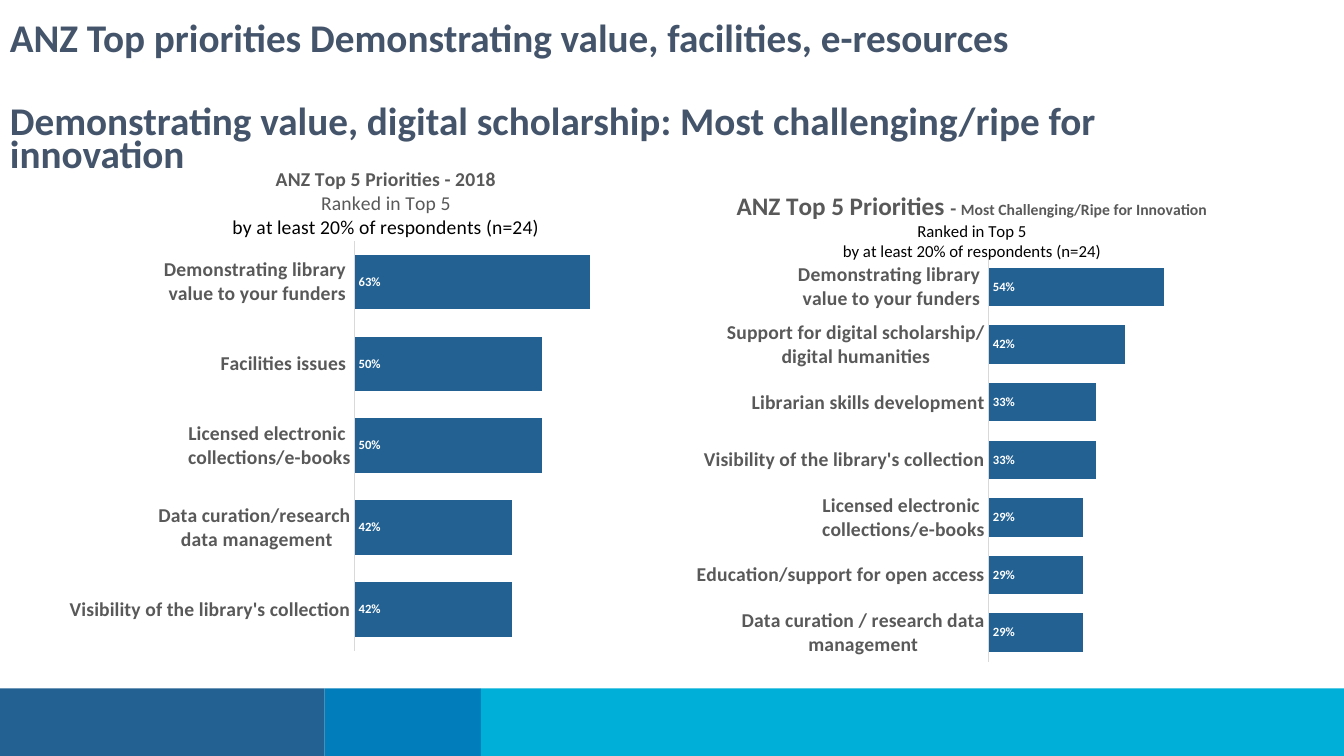
from itertools import accumulate
from typing import Any, NamedTuple

from pptx import Presentation
from pptx.chart.chart import Chart
from pptx.chart.data import CategoryChartData
from pptx.dml.color import RGBColor
from pptx.enum.chart import XL_CHART_TYPE as ChartType
from pptx.enum.chart import XL_LABEL_POSITION as LabelPosition
from pptx.enum.chart import XL_TICK_LABEL_POSITION as TickLabels
from pptx.enum.chart import XL_TICK_MARK as TickMark
from pptx.enum.shapes import MSO_SHAPE as ShapeType
from pptx.enum.text import PP_ALIGN as Align
from pptx.oxml import parse_xml
from pptx.oxml.ns import nsdecls
from pptx.slide import Slide
from pptx.util import Inches, Pt

NAVY, BLUE, CYAN = "236192", "007DBA", "00AFD7"
SLATE, GREY, LIGHT, BLACK, WHITE = "44546A", "595959", "D9D9D9", "000000", "FFFFFF"


class Run(NamedTuple):
    text: str
    size: float
    color: str = BLACK
    bold: bool = False


class PriorityChart(NamedTuple):
    box: tuple[float, float, float, float]
    title: list[list[Run]]
    title_at: tuple[float, float]
    plot: tuple[float, float, float, float]
    priorities: list[tuple[str, float]]  # from bottom to top


class Band(NamedTuple):
    width: float
    color: str


BANDS = [Band(3.22, NAVY), Band(1.55, BLUE), Band(8.56, CYAN)]

HEADLINES = [
    "ANZ Top priorities Demonstrating value, facilities, e-resources",
    "Demonstrating value, digital scholarship: Most challenging/ripe for innovation",
]

FUNDERS = "Demonstrating library \nvalue to your funders"
LICENSED = "Licensed electronic \ncollections/e-books"
VISIBILITY = "Visibility of the library's collection"
RESPONDENTS = "by at least 20% of respondents (n=24)"

CHARTS = [
    PriorityChart(
        box=(0.5, 1.61, 5.92, 5.21),
        title=[
            [Run("ANZ Top 5 Priorities - 2018", 14, GREY, True)],
            [Run("Ranked in Top 5", 14, GREY)],
            [Run(RESPONDENTS, 14)],
        ],
        title_at=(0.3, 0),
        plot=(0.51, 0.15, 0.47, 0.78),
        priorities=[
            (VISIBILITY, 0.42),
            ("Data curation/research\n data management", 0.42),
            (LICENSED, 0.5),
            ("Facilities issues ", 0.5),
            (FUNDERS, 0.63),
        ],
    ),
    PriorityChart(
        box=(6.41, 1.69, 6.18, 5.13),
        title=[
            [
                Run("ANZ Top 5 Priorities ", 18, GREY, True),
                Run("- ", 14, GREY, True),
                Run("Most Challenging/Ripe for Innovation", 11.2, GREY, True),
            ],
            [Run("Ranked in Top 5", 12)],
            [Run(RESPONDENTS, 12)],
        ],
        title_at=(0.14, 0.03),
        plot=(0.55, 0.17, 0.39, 0.78),
        priorities=[
            ("Data curation / research data management", 0.29),
            ("Education/support for open access", 0.29),
            (LICENSED, 0.29),
            (VISIBILITY, 0.33),
            ("Librarian skills development", 0.33),
            ("Support for digital scholarship/\ndigital humanities", 0.42),
            (FUNDERS, 0.54),
        ],
    ),
]


def rgb(color: str) -> RGBColor:
    return RGBColor.from_string(color)


def apply(target: Any, values: dict[str, Any]) -> None:
    for name, value in values.items():
        setattr(target, name, value)


def set_font(font: Any, size: float, color: str, bold: bool = False) -> None:
    apply(font, {"name": "Calibri", "size": Pt(size), "bold": bold})
    font.color.rgb = rgb(color)


def set_layout(parent: Any, index: int, place: tuple[float, ...], target: str = "") -> None:
    """Place a chart part by fractions of the chart area."""
    for old_layout in parent.xpath("c:layout"):
        parent.remove(old_layout)
    names = ("x", "y", "w", "h")[: len(place)]
    inner = f'<c:layoutTarget val="{target}"/>' if target else ""
    inner += "".join(f'<c:{name}Mode val="edge"/>' for name in names[:2])
    inner += "".join(f'<c:{name} val="{value}"/>' for name, value in zip(names, place))
    parent.insert(index, parse_xml(
        f'<c:layout {nsdecls("c")}><c:manualLayout>{inner}</c:manualLayout></c:layout>'))


def add_bands(slide: Slide) -> None:
    lefts = accumulate((band.width for band in BANDS), initial=0)
    for left, band in zip(lefts, BANDS):
        shape = slide.shapes.add_shape(
            ShapeType.RECTANGLE, Inches(left), Inches(6.83), Inches(band.width), Inches(0.67))
        shape.shadow.inherit = False
        shape.fill.solid()
        shape.fill.fore_color.rgb = rgb(band.color)
        shape.line.fill.background()


def add_headlines(slide: Slide) -> None:
    box = slide.shapes.add_textbox(Inches(0), Inches(0.21), Inches(12.31), Inches(1.68))
    frame = box.text_frame
    frame.word_wrap = True
    for index, text in enumerate(HEADLINES):
        paragraph = frame.add_paragraph() if index else frame.paragraphs[0]
        apply(paragraph, {"line_spacing": 0.7, "space_before": Pt(36 if index else 0)})
        run = paragraph.add_run()
        run.text = text
        set_font(run.font, 28, SLATE, True)


def add_chart_title(chart: Chart, lines: list[list[Run]], place: tuple[float, float]) -> None:
    chart.has_title = True
    frame = chart.chart_title.text_frame
    for index, line in enumerate(lines):
        paragraph = frame.add_paragraph() if index else frame.paragraphs[0]
        paragraph.alignment = Align.CENTER
        for part in line:
            run = paragraph.add_run()
            run.text = part.text
            set_font(run.font, part.size, part.color, part.bold)
    set_layout(chart.element.xpath("c:chart/c:title")[0], 1, place)


def add_priority_chart(slide: Slide, content: PriorityChart) -> None:
    data = CategoryChartData(number_format="0%")
    data.categories = [name for name, _ in content.priorities]
    data.add_series("Series 1", [share for _, share in content.priorities])
    chart = slide.shapes.add_chart(
        ChartType.BAR_CLUSTERED, *map(Inches, content.box), data).chart
    chart.has_legend = False
    set_font(chart.font, 10, BLACK)
    add_chart_title(chart, content.title, content.title_at)
    set_layout(chart.element.xpath("c:chart/c:plotArea")[0], 0, content.plot, "inner")

    # Axes
    apply(chart.value_axis, {"visible": False, "has_major_gridlines": False,
                             "minimum_scale": 0, "maximum_scale": 0.75})
    axis = chart.category_axis
    apply(axis, {"major_tick_mark": TickMark.NONE, "minor_tick_mark": TickMark.NONE,
                 "tick_label_position": TickLabels.NEXT_TO_AXIS})
    set_font(axis.tick_labels.font, 14, GREY, True)
    axis.format.line.color.rgb = rgb(LIGHT)
    axis.format.line.width = Pt(0.75)

    # Bars and their labels
    plot = chart.plots[0]
    apply(plot, {"gap_width": 50, "vary_by_categories": False, "has_data_labels": True})
    fill = plot.series[0].format.fill
    fill.solid()
    fill.fore_color.rgb = rgb(NAVY)
    apply(plot.data_labels, {"show_value": True, "position": LabelPosition.INSIDE_BASE,
                             "number_format": "0%", "number_format_is_linked": False})
    set_font(plot.data_labels.font, 9, WHITE, True)


def main() -> None:
    presentation = Presentation()
    apply(presentation, {"slide_width": Inches(13.33), "slide_height": Inches(7.5)})
    slide = presentation.slides.add_slide(presentation.slide_layouts[6])
    add_bands(slide)
    for content in CHARTS:
        add_priority_chart(slide, content)
    add_headlines(slide)
    presentation.save("out.pptx")


if __name__ == "__main__":
    main()
